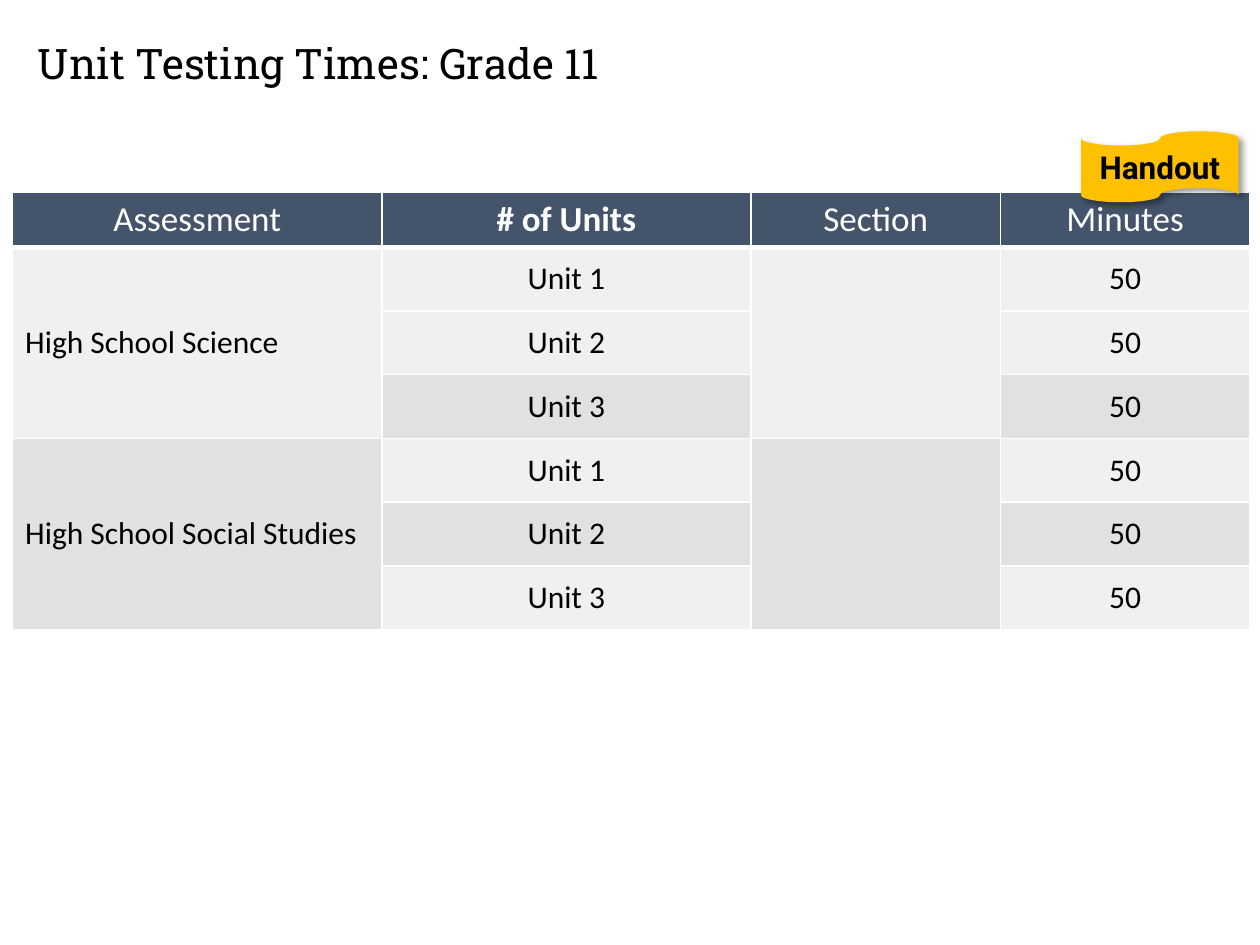
from lxml import etree
from pptx import Presentation
from pptx.dml.color import RGBColor
from pptx.enum import shapes, text
from pptx.oxml import ns
from pptx.util import Inches, Pt

WHITE = RGBColor(0xFF, 0xFF, 0xFF)
BLACK = RGBColor(0x00, 0x00, 0x00)
NAVY = RGBColor(0x44, 0x54, 0x6A)
GOLD = RGBColor(0xFF, 0xC0, 0x00)
LIGHT = RGBColor(0xF0, 0xF0, 0xF0)
GREY = RGBColor(0xE1, 0xE1, 0xE1)

HEADINGS = ["Assessment", "# of Units", "Section", "Minutes"]
COLUMN_SHARES = [0.293, 0.293, 0.198, 0.198]
HEADER_HEIGHT, ROW_HEIGHT = 0.43, 0.5
# Assessment, its fill, and the fill of each of its units
ASSESSMENTS = [
    ("High School Science", LIGHT, [LIGHT, LIGHT, GREY]),
    ("High School Social Studies", GREY, [LIGHT, GREY, LIGHT]),
]
MINUTES = "50"


def write(frame, words, font="Calibri", size=18, color=BLACK, bold=False,
          align=text.PP_ALIGN.CENTER):
    """Put one formatted paragraph into a text frame."""
    para = frame.paragraphs[0]
    para.alignment = align
    span = para.add_run()
    span.text = words
    span.font.name = font
    span.font.size = Pt(size)
    span.font.bold = bold
    span.font.color.rgb = color


def set_borders(cell, bottom=1):
    """Draw white lines round a cell, widths in points."""
    properties = cell._tc.get_or_add_tcPr()
    widths = {"lnL": 1, "lnR": 1, "lnT": 1, "lnB": bottom}
    for place, (side, width) in enumerate(widths.items()):
        line = etree.Element(ns.qn(f"a:{side}"), w=str(Pt(width)))
        fill = etree.SubElement(line, ns.qn("a:solidFill"))
        etree.SubElement(fill, ns.qn("a:srgbClr"), val=str(WHITE))
        properties.insert(place, line)


def add_shadow(shape, blur, distance, angle, opacity):
    shape.shadow.inherit = False
    effects = shape._element.spPr.find(ns.qn("a:effectLst"))
    shadow = etree.SubElement(
        effects, ns.qn("a:outerShdw"), blurRad=str(Pt(blur)), dist=str(Pt(distance)),
        dir=str(angle * 60000), algn="tl", rotWithShape="0")
    color = etree.SubElement(shadow, ns.qn("a:srgbClr"), val=str(BLACK))
    etree.SubElement(color, ns.qn("a:alpha"), val=str(opacity * 1000))


class Slide:
    """Holds the deck, its page and the fonts; places are shares of the page."""
    title_font, label_font = "Roboto Slab", "Roboto"

    def __init__(self):
        self.deck = Presentation()
        self.deck.slide_width, self.deck.slide_height = Inches(10), Inches(7.5)
        self.page = self.deck.slides.add_slide(self.deck.slide_layouts[5])

    def area(self, left, top, width, height):
        across, down = self.deck.slide_width, self.deck.slide_height
        return (int(left * across), int(top * down),
                int(width * across), int(height * down))

    def title(self, words, *place):
        box = self.page.shapes.title
        box.left, box.top, box.width, box.height = self.area(*place)
        frame = box.text_frame
        frame.margin_left = frame.margin_right = 0
        frame.margin_top = frame.margin_bottom = 0
        frame.vertical_anchor = text.MSO_ANCHOR.TOP
        write(frame, words, font=self.title_font, size=24, align=text.PP_ALIGN.LEFT)

    def table(self, rows, shares, *place):
        area = self.area(*place)
        table = self.page.shapes.add_table(rows, len(shares), *area).table
        for column, share in zip(table.columns, shares):
            column.width = int(share * self.deck.slide_width)
        for number, row in enumerate(table.rows):
            row.height = Inches(ROW_HEIGHT if number else HEADER_HEIGHT)
            for cell in row.cells:
                set_borders(cell, bottom=1 if number else 3)
        return table

    def cell(self, cell, words, fill, margin=0.1, **style):
        cell.fill.solid()
        cell.fill.fore_color.rgb = fill
        cell.vertical_anchor = text.MSO_ANCHOR.MIDDLE
        cell.margin_left = cell.margin_right = Inches(0.1)
        cell.margin_top = cell.margin_bottom = Inches(margin)
        if words:
            write(cell.text_frame, words, **style)

    def tag(self, words, *place):
        shape = self.page.shapes.add_shape(
            shapes.MSO_SHAPE.FLOWCHART_PUNCHED_TAPE, *self.area(*place))
        shape.fill.solid()
        shape.fill.fore_color.rgb = GOLD
        shape.line.fill.background()
        add_shadow(shape, blur=4, distance=3, angle=45, opacity=40)
        shape.text_frame.vertical_anchor = text.MSO_ANCHOR.MIDDLE
        write(shape.text_frame, words, font=self.label_font, bold=True)


def main():
    slide = Slide()
    slide.title("Unit Testing Times: Grade 11", 0.03, 0.04, 0.862, 0.104)

    # Table with its header row
    count = 1 + sum(len(fills) for _, _, fills in ASSESSMENTS)
    table = slide.table(count, COLUMN_SHARES, 0.01, 0.203, 0.982, 0.457)
    for column, heading in enumerate(HEADINGS):
        slide.cell(table.cell(0, column), heading, NAVY, margin=0.05, size=20,
                   color=WHITE, bold=column == 1)

    # One block of unit rows for each assessment
    first = 1
    for name, block_fill, unit_fills in ASSESSMENTS:
        last = first + len(unit_fills) - 1
        for column, words in ((0, name), (2, "")):
            table.cell(first, column).merge(table.cell(last, column))
            slide.cell(table.cell(first, column), words, block_fill,
                       align=text.PP_ALIGN.LEFT)
        for number, fill in enumerate(unit_fills):
            row = first + number
            slide.cell(table.cell(row, 1), f"Unit {number + 1}", fill)
            slide.cell(table.cell(row, 3), MINUTES, fill)
        first = last + 1

    # Handout tag over the table's corner
    slide.tag("Handout", 0.858, 0.139, 0.125, 0.075)
    slide.deck.save("out.pptx")


if __name__ == "__main__":
    main()
